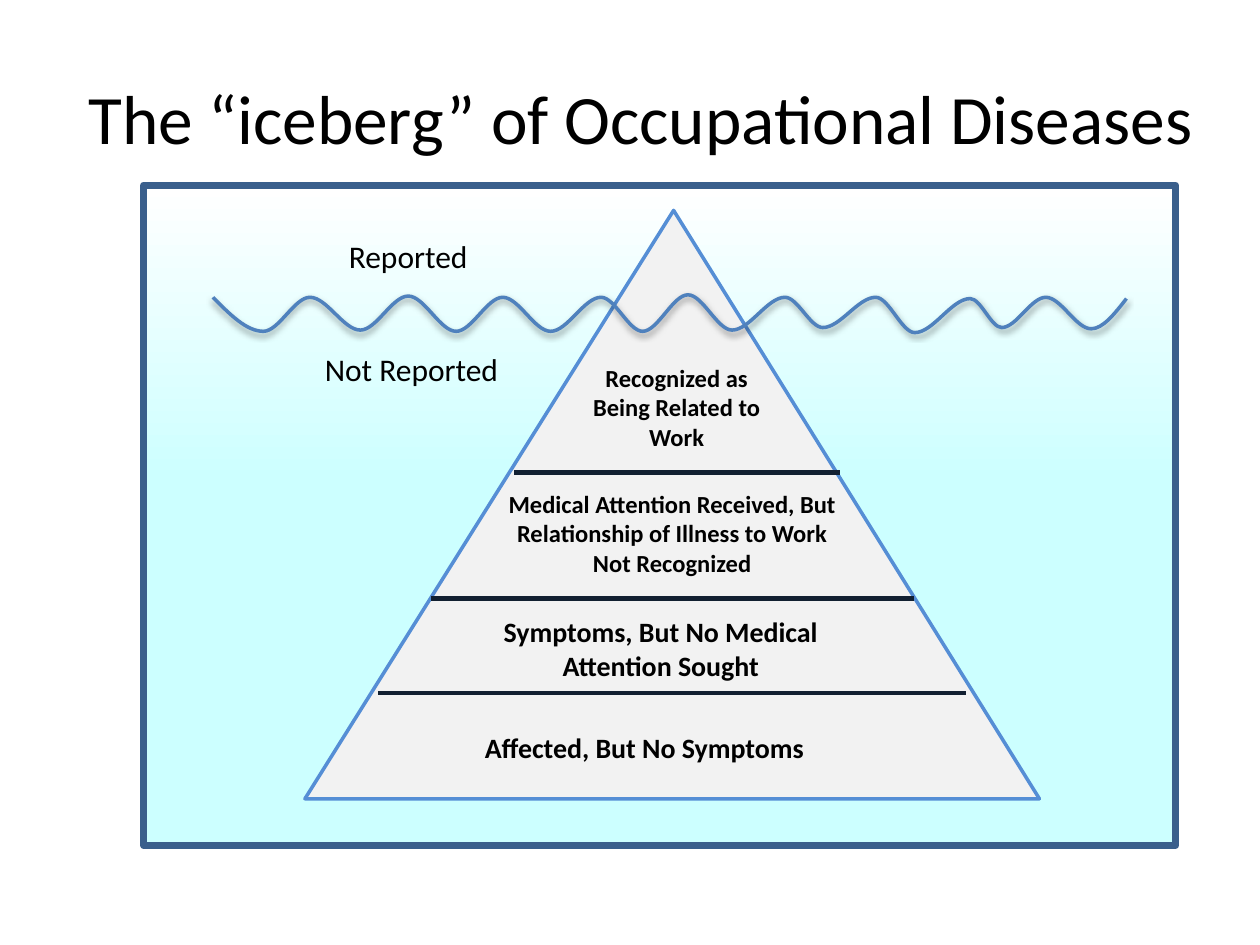
import pptx
import pptx.dml.color
import pptx.enum.shapes
import pptx.enum.text
import pptx.oxml
import pptx.oxml.ns
import pptx.util
from lxml import etree

Inches = pptx.util.Inches
Pt = pptx.util.Pt
ALIGN = pptx.enum.text.PP_ALIGN
SHAPE = pptx.enum.shapes.MSO_SHAPE
qn = pptx.oxml.ns.qn

FONT = "Calibri"
COLORS = {"text": "000000", "sea": "CCFFFF", "sky": "FFFFFF", "frame": "3A5F8C",
          "ice": "F2F2F2", "edge": "558ED5", "rule": "122031", "wave": "4F81BD"}

# Layers below the surface: text, left, top, width, height, size, align
LAYERS = [
    ("Recognized as Being Related to Work",
     4.58, 2.83, 1.58, 0.81, 14, ALIGN.CENTER),
    ("Medical Attention Received, But Relationship of Illness to Work Not Recognized",
     3.92, 3.83, 2.83, 0.81, 14, ALIGN.CENTER),
    ("Symptoms, But No Medical Attention Sought",
     3.83, 4.83, 2.83, 0.64, 16, ALIGN.CENTER),
    ("Affected, But No Symptoms",
     3.75, 5.75, 3.83, 0.37, 16, ALIGN.LEFT),
]
LABELS = [("Reported", 2.67, 1.83, 1.42), ("Not Reported", 2.48, 2.73, 1.73)]
# Left, right and height of each rule
RULES = [(4.08, 6.67, 3.75), (3.42, 7.25, 4.75), (3, 7.67, 5.5)]
# Crests and troughs of the water line
WAVE = [(1.69, 2.36), (2.09, 2.63), (2.46, 2.36), (2.86, 2.62), (3.24, 2.35),
        (3.62, 2.63), (3.99, 2.36), (4.37, 2.63), (4.77, 2.36), (5.1, 2.63),
        (5.46, 2.34), (5.81, 2.62), (6.23, 2.36), (6.53, 2.6), (6.95, 2.36),
        (7.26, 2.64), (7.7, 2.37), (7.95, 2.6), (8.3, 2.36), (8.66, 2.61),
        (8.94, 2.37)]


def color(name):
    return pptx.dml.color.RGBColor.from_string(COLORS[name])


def put_text(frame, text, size=18, bold=False, align=ALIGN.LEFT):
    frame.word_wrap = True
    para = frame.paragraphs[0]
    para.alignment = align
    run = para.add_run()
    run.text = text
    font = run.font
    font.name, font.size, font.bold = FONT, Pt(size), bold
    font.color.rgb = color("text")


def add_text(slide, text, left, top, width, height, **style):
    box = slide.shapes.add_textbox(
        Inches(left), Inches(top), Inches(width), Inches(height))
    put_text(box.text_frame, text, **style)


def set_title(slide, text):
    title = slide.shapes.title
    title.left, title.top = Inches(0.51), Inches(0.52)
    title.width, title.height = Inches(9.15), Inches(1.25)
    frame = title.text_frame
    frame.auto_size = pptx.enum.text.MSO_AUTO_SIZE.NONE
    frame.vertical_anchor = pptx.enum.text.MSO_ANCHOR.TOP
    frame.margin_top = Inches(0.08)
    put_text(frame, text, size=39.6, align=ALIGN.CENTER)


def add_shape(slide, kind, left, top, width, height, line, weight):
    shape = slide.shapes.add_shape(
        kind, Inches(left), Inches(top), Inches(width), Inches(height))
    shape.shadow.inherit = False
    shape.line.color.rgb = color(line)
    shape.line.width = Pt(weight)
    return shape


def add_sea(slide):
    sea = add_shape(slide, SHAPE.RECTANGLE, 1.14, 1.47, 8.19, 5.24, "frame", 4)
    sea.fill.gradient()
    sea.fill.gradient_angle = 90
    stops = sea.fill.gradient_stops
    for stop, place, name in zip(stops, (0.55, 1), ("sea", "sky")):
        stop.position = place
        stop.color.rgb = color(name)


def add_berg(slide):
    berg = add_shape(slide, SHAPE.ISOSCELES_TRIANGLE,
                     2.42, 1.67, 5.83, 4.67, "edge", 2)
    berg.adjustments[0] = 0.502
    berg.fill.solid()
    berg.fill.fore_color.rgb = color("ice")


def add_rule(slide, left, right, top):
    rule = slide.shapes.add_connector(
        pptx.enum.shapes.MSO_CONNECTOR.STRAIGHT,
        Inches(left), Inches(top), Inches(right), Inches(top))
    rule.line.color.rgb = color("rule")
    rule.line.width = Pt(2.5)
    etree.SubElement(rule._element.spPr, qn("a:effectLst"))


def bend(shape):
    """Turn the straight parts into curves that are level at each crest and trough."""
    spots = list(shape._element.iter(qn("a:pt")))
    nodes = [(int(spot.get("x")), int(spot.get("y"))) for spot in spots]
    last = len(nodes) - 1
    for i in range(1, len(nodes)):
        (x0, y0), (x1, y1) = nodes[i - 1], nodes[i]
        third, mid = (x1 - x0) // 3, (y0 + y1) // 2
        first = (x0 + third, mid if i == 1 else y0)
        second = (x1 - third, mid if i == last else y1)
        part = spots[i].getparent()
        curve = etree.Element(qn("a:cubicBezTo"))
        for x, y in (first, second, (x1, y1)):
            etree.SubElement(curve, qn("a:pt"), x=str(x), y=str(y))
        part.getparent().replace(part, curve)


def add_shadow(shape):
    shape.shadow.inherit = False
    effects = shape._element.spPr.find(qn("a:effectLst"))
    shadow = etree.SubElement(effects, qn("a:outerShdw"), blurRad=str(Pt(3.1)),
                              dist=str(Pt(1.6)), dir="5400000", rotWithShape="0")
    tint = etree.SubElement(shadow, qn("a:srgbClr"), val=COLORS["text"])
    etree.SubElement(tint, qn("a:alpha"), val="38000")


def add_wave(slide):
    nodes = [(Inches(x), Inches(y)) for x, y in WAVE]
    path = slide.shapes.build_freeform(*nodes[0])
    path.add_line_segments(nodes[1:], close=False)
    wave = path.convert_to_shape()
    bend(wave)
    wave.fill.background()
    wave.line.color.rgb = color("wave")
    wave.line.width = Pt(2)
    add_shadow(wave)


def main():
    deck = pptx.Presentation()
    deck.slide_width, deck.slide_height = Inches(10), Inches(7.5)
    slide = deck.slides.add_slide(deck.slide_layouts[5])
    set_title(slide, "The “iceberg” of Occupational Diseases")
    add_sea(slide)
    add_berg(slide)
    for text, left, top, width, height, size, align in LAYERS:
        add_text(slide, text, left, top, width, height,
                 size=size, bold=True, align=align)
    for rule in RULES:
        add_rule(slide, *rule)
    for text, left, top, width in LABELS:
        add_text(slide, text, left, top, width, 0.4)
    add_wave(slide)
    deck.save("out.pptx")


if __name__ == "__main__":
    main()
